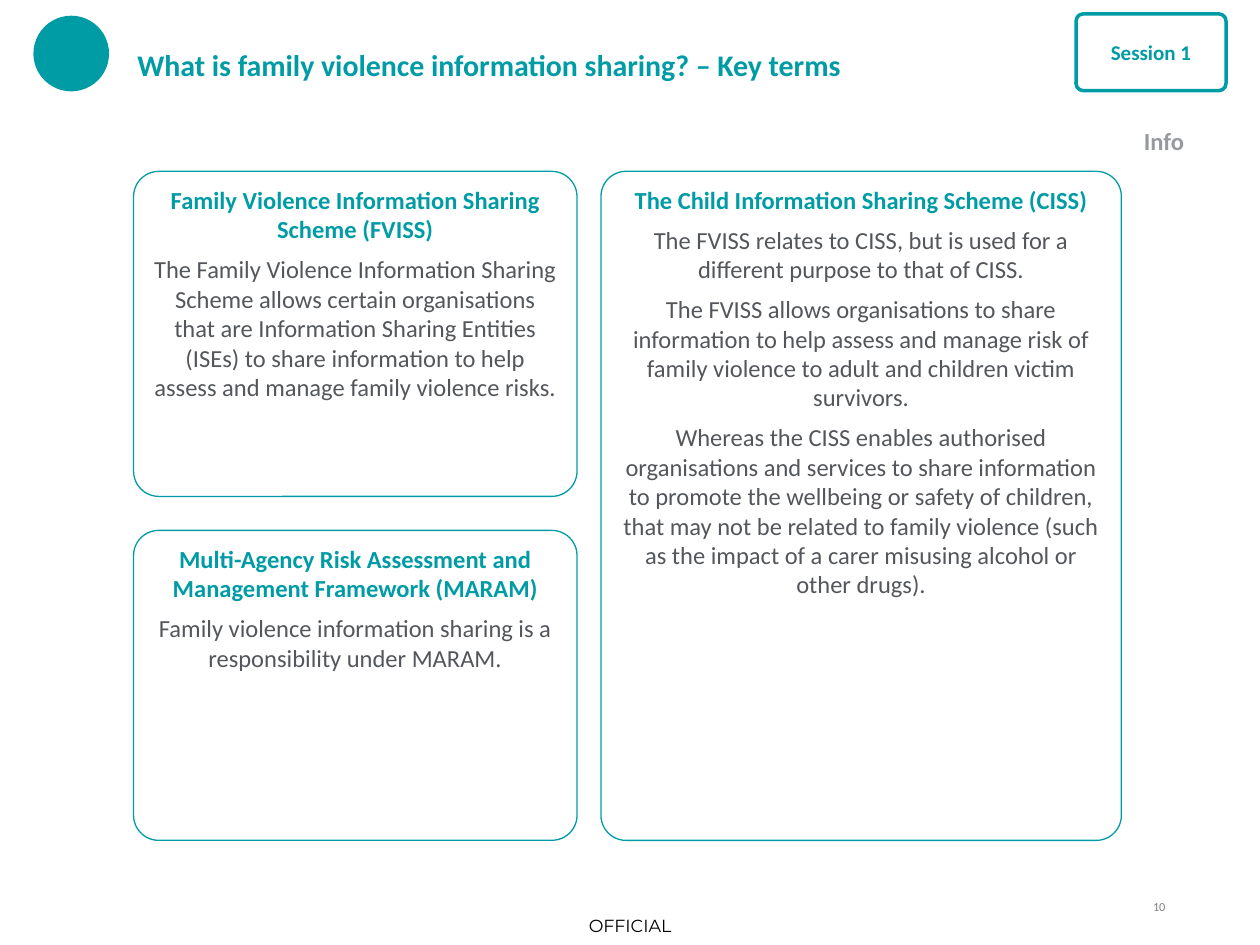
import dataclasses

import pptx
import pptx.dml.color
import pptx.enum.shapes
import pptx.enum.text
import pptx.util

Inches = pptx.util.Inches
Pt = pptx.util.Pt
Align = pptx.enum.text.PP_ALIGN
Anchor = pptx.enum.text.MSO_ANCHOR
Shape = pptx.enum.shapes.MSO_SHAPE


@dataclasses.dataclass(frozen=True)
class Theme:
    teal: str = "009CA6"
    body: str = "53565A"
    label: str = "96999E"
    number: str = "7F7F7F"
    black: str = "000000"
    white: str = "FFFFFF"
    font: str = "Calibri"
    marking_font: str = "Montserrat"
    title_size: float = 17.1
    card_size: float = 14
    badge_size: float = 12
    marking_size: float = 10
    number_size: float = 7


class Page:
    """Holds the theme and the current slide, and draws each kind of element."""

    def __init__(self, deck, theme):
        self.theme = theme
        self.slide = deck.slides.add_slide(deck.slide_layouts[5])

    def color(self, value):
        return pptx.dml.color.RGBColor.from_string(value)

    def frame(self, box, anchor, margins):
        frame = box.text_frame
        frame.word_wrap = True
        frame.auto_size = pptx.enum.text.MSO_AUTO_SIZE.NONE
        frame.vertical_anchor = anchor
        frame.margin_left = frame.margin_right = Inches(margins[0])
        frame.margin_top = frame.margin_bottom = Inches(margins[1])
        return frame

    def style(self, para, size, color, bold=False, align=Align.LEFT, after=0, font=None):
        para.alignment = align
        para.space_after = Pt(after)
        for span in para.runs:
            span.font.name = font or self.theme.font
            span.font.size = Pt(size)
            span.font.bold = bold
            span.font.color.rgb = self.color(color)

    def title(self, text, left, top, width, height):
        box = self.slide.shapes.title
        box.left, box.top = Inches(left), Inches(top)
        box.width, box.height = Inches(width), Inches(height)
        frame = self.frame(box, Anchor.MIDDLE, (0, 0))
        frame.text = text
        self.style(frame.paragraphs[0], self.theme.title_size, self.theme.teal, True, after=3.4)

    def text(self, text, place, size, color, anchor=Anchor.TOP, margins=(0, 0), **look):
        box = self.slide.shapes.add_textbox(*map(Inches, place))
        frame = self.frame(box, anchor, margins)
        frame.text = text
        self.style(frame.paragraphs[0], size, color, **look)

    def shape(self, kind, place, fill=None, line=0.75, corner=None):
        box = self.slide.shapes.add_shape(kind, *map(Inches, place))
        box.shadow.inherit = False
        if corner is not None:
            box.adjustments[0] = corner
        if fill:
            box.fill.solid()
            box.fill.fore_color.rgb = self.color(fill)
        else:
            box.fill.background()
        box.line.color.rgb = self.color(self.theme.teal)
        box.line.width = Pt(line)
        return box

    def badge(self, text, place):
        box = self.shape(Shape.ROUNDED_RECTANGLE, place, self.theme.white, 2, 0.094)
        frame = self.frame(box, Anchor.MIDDLE, (0.2, 0.05))
        frame.text = text
        self.style(frame.paragraphs[0], self.theme.badge_size, self.theme.teal, True,
                   Align.CENTER, 6)

    def card(self, place, heading, body):
        radius = 0.2
        corner = round(radius / min(place[2:]), 3)
        box = self.shape(Shape.ROUNDED_RECTANGLE, place, corner=corner)
        frame = self.frame(box, Anchor.TOP, (0.1, 0.05))
        frame.text = "\n".join([heading, *body])
        for index, para in enumerate(frame.paragraphs):
            is_heading = index == 0
            color = self.theme.teal if is_heading else self.theme.body
            self.style(para, self.theme.card_size, color, is_heading, Align.CENTER, 6)


def main():
    deck = pptx.Presentation()
    deck.slide_width, deck.slide_height = Inches(10), Inches(7.5)
    theme = Theme()
    page = Page(deck, theme)

    page.text("OFFICIAL", (4.49, 7.19, 1.02, 0.31), theme.marking_size, theme.black,
              Anchor.MIDDLE, align=Align.CENTER, font=theme.marking_font)
    page.text("Info", (8.98, 0.95, 0.9, 0.34), theme.card_size, theme.label,
              margins=(0.1, 0.05), bold=True)
    page.shape(Shape.OVAL, (0.27, 0.13, 0.59, 0.59), theme.teal)
    page.title("What is family violence information sharing? – Key terms", 1.09, 0.19, 6.86, 0.65)
    page.badge("Session 1", (8.54, 0.11, 1.19, 0.61))

    left, right, top, bottom = 1.06, 4.77, 1.36, 6.67
    narrow, wide = 3.52, 4.13
    lower = 4.21
    page.card((left, top, narrow, 2.58), "Family Violence Information Sharing Scheme (FVISS)", [
        "The Family Violence Information Sharing Scheme allows certain organisations that are "
        "Information Sharing Entities (ISEs) to share information to help assess and manage "
        "family violence risks.",
    ])
    page.card((left, lower, narrow, bottom - lower),
              "Multi-Agency Risk Assessment and Management Framework (MARAM)", [
        "Family violence information sharing is a responsibility under MARAM.",
    ])
    page.card((right, top, wide, bottom - top), "The Child Information Sharing Scheme (CISS)", [
        "The FVISS relates to CISS, but is used for a different purpose to that of CISS.",
        "The FVISS allows organisations to share information to help assess and manage risk of "
        "family violence to adult and children victim survivors.",
        "Whereas the CISS enables authorised organisations and services to share information to "
        "promote the wellbeing or safety of children, that may not be related to family violence "
        "(such as the impact of a carer misusing alcohol or other drugs).",
    ])
    page.text("10", (8.91, 7.14, 0.34, 0.2), theme.number_size, theme.number, align=Align.RIGHT)

    deck.save("out.pptx")


if __name__ == "__main__":
    main()
